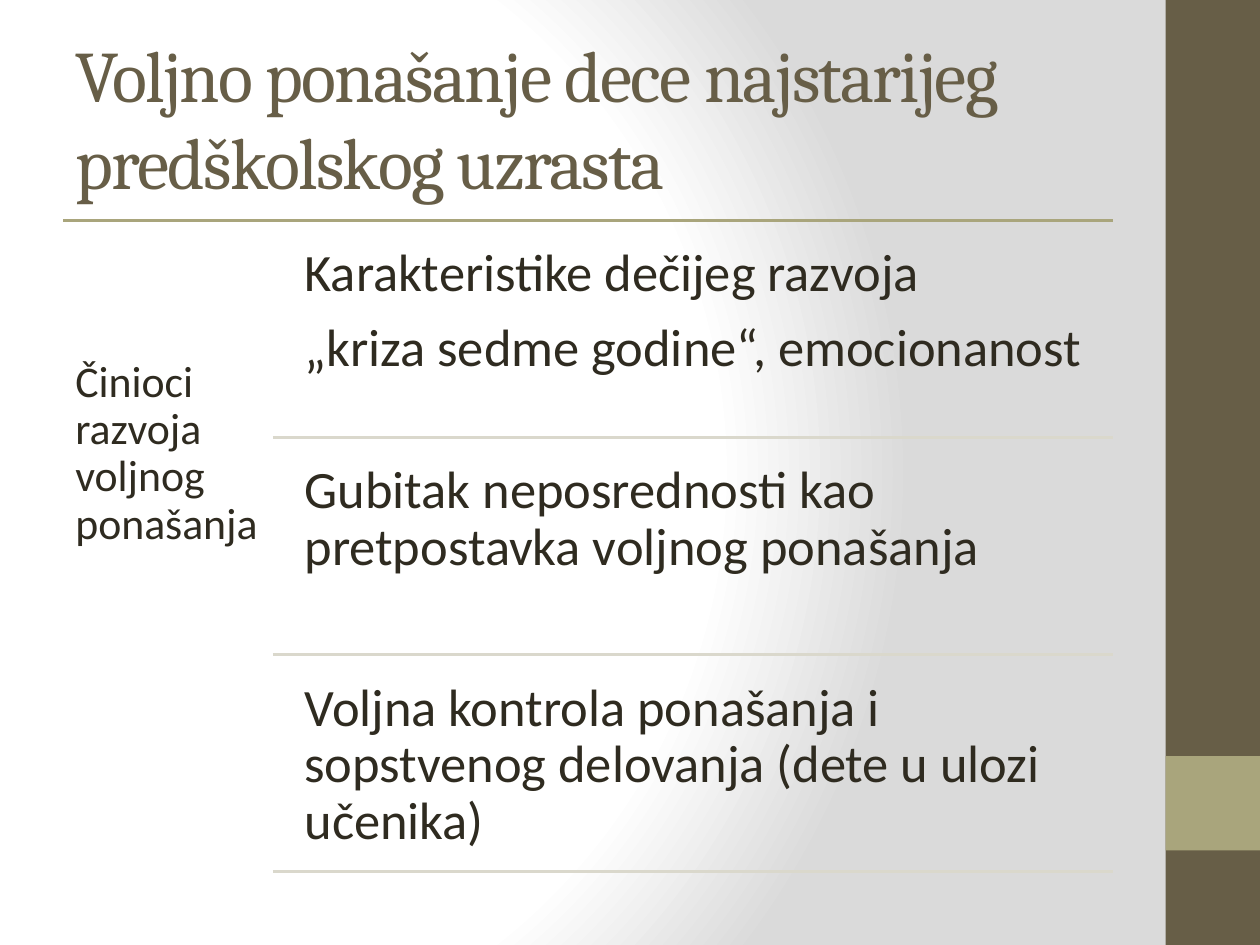
from lxml import etree
from pptx import Presentation
from pptx.dml.color import RGBColor
from pptx.enum.shapes import MSO_CONNECTOR as Connector, MSO_SHAPE as Shape
from pptx.enum.text import MSO_ANCHOR as Anchor, PP_ALIGN as Align
from pptx.oxml import parse_xml
from pptx.oxml.ns import nsdecls, qn
from pptx.util import Pt

BROWN = RGBColor(0x67, 0x5E, 0x47)
OLIVE = RGBColor(0xA9, 0xA5, 0x7C)
PALE = RGBColor(0xDA, 0xD8, 0xCC)
INK = RGBColor(0x2F, 0x2B, 0x20)
WHITE = RGBColor(0xFF, 0xFF, 0xFF)
GREY = RGBColor(0xDA, 0xDA, 0xDA)


class SlideBuilder:
    heading_font = "Cambria"
    body_font = "Calibri"

    def __init__(self, page):
        self.page = page

    def background(self, stops):
        colours = "".join(
            f'<a:gs pos="{percent * 1000}"><a:srgbClr val="{colour}"/></a:gs>'
            for percent, colour in stops)
        self.page.background.fill.solid()
        properties = self.page.element.cSld.find(qn("p:bg")).find(qn("p:bgPr"))
        properties.replace(properties[0], parse_xml(
            f'<a:gradFill {nsdecls("a")} rotWithShape="1"><a:gsLst>{colours}</a:gsLst>'
            '<a:path path="circle"><a:fillToRect l="20000" t="50000" '
            'r="100000" b="50000"/></a:path></a:gradFill>'))

    def block(self, left, top, width, height, colour):
        shape = self.page.shapes.add_shape(
            Shape.RECTANGLE, Pt(left), Pt(top), Pt(width), Pt(height))
        shape.shadow.inherit = False
        shape.fill.solid()
        shape.fill.fore_color.rgb = colour
        shape.line.fill.background()

    def rule(self, left, right, top, colour):
        line = self.page.shapes.add_connector(
            Connector.STRAIGHT, Pt(left), Pt(top), Pt(right), Pt(top))
        line.line.color.rgb = colour
        line.line.width = Pt(2)
        etree.SubElement(line._element.spPr, qn("a:effectLst"))

    def span(self, para, text, size, font, colour):
        span = para.add_run()
        span.text = text
        span.font.size = Pt(size)
        span.font.name = font
        span.font.color.rgb = colour
        return span

    def title(self, left, top, width, height, text):
        box = self.page.shapes.title
        box.left, box.top, box.width, box.height = map(Pt, (left, top, width, height))
        box.text_frame.vertical_anchor = Anchor.MIDDLE
        para = box.text_frame.paragraphs[0]
        para.alignment = Align.LEFT
        span = self.span(para, text, 41.4, self.heading_font, BROWN)
        span.font._element.set("spc", "-100")

    def text(self, left, top, width, height, lines, size, inset, inset_top=None):
        box = self.page.shapes.add_textbox(Pt(left), Pt(top), Pt(width), Pt(height))
        frame = box.text_frame
        frame.word_wrap = True
        frame.margin_left = frame.margin_right = frame.margin_bottom = Pt(inset)
        frame.margin_top = Pt(inset_top or inset)
        for index, line in enumerate(lines):
            para = frame.add_paragraph() if index else frame.paragraphs[0]
            para.line_spacing = 0.9
            para.space_after = Pt(size * 0.35)
            self.span(para, line, size, self.body_font, INK)


def main():
    deck = Presentation()
    deck.slide_width, deck.slide_height = Pt(720), Pt(540)
    builder = SlideBuilder(deck.slides.add_slide(deck.slide_layouts[5]))

    # Background and side band
    builder.background([(0, WHITE), (75, WHITE), (100, GREY)])
    builder.block(666, 0, 54, 540, BROWN)
    builder.block(666, 432, 54, 54, OLIVE)

    # Title
    builder.title(36, 21.6, 600, 90,
                  "Voljno ponašanje dece najstarijeg predškolskog uzrasta")

    # Left column: the topic
    left, right, top = 36, 636, 126
    builder.rule(left, right, top, OLIVE)
    builder.text(left, top, 120, 378, ["Činioci razvoja voljnog ponašanja"],
                 size=25, inset=7.2, inset_top=79.5)

    # Right column: one row per factor, each closed by a rule
    factors = [
        ["Karakteristike dečijeg razvoja", "„kriza sedme godine“, emocionanost"],
        ["Gubitak neposrednosti kao pretpostavka voljnog ponašanja"],
        ["Voljna kontrola ponašanja i sopstvenog delovanja (dete u ulozi učenika)"],
    ]
    gap, height = 5.9, 118.15
    for row, lines in enumerate(factors):
        row_top = top + gap + row * (height + gap)
        builder.text(165, row_top, right - 165, height, lines, size=30, inset=9)
        builder.rule(156, right, row_top + height, PALE)

    deck.save("out.pptx")


if __name__ == "__main__":
    main()
